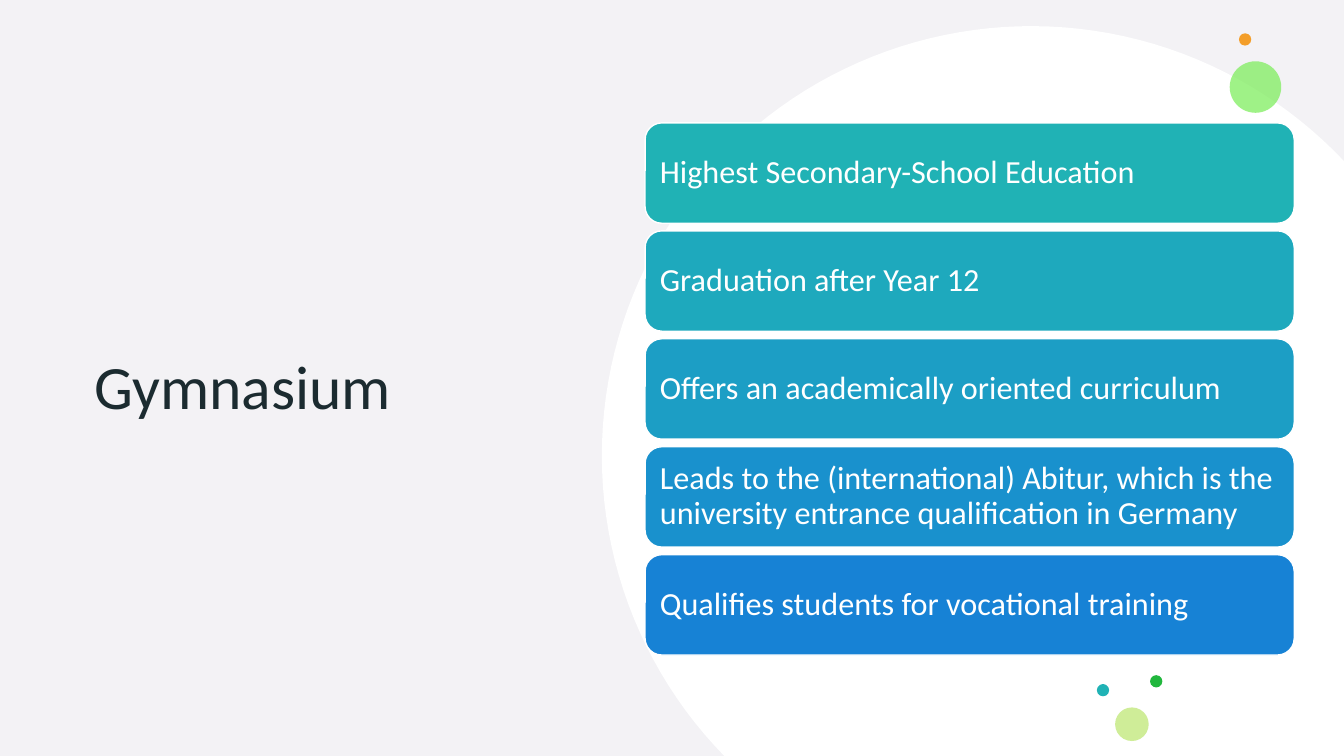
import math
from dataclasses import dataclass

from lxml import etree
from pptx import Presentation
from pptx import util as u
from pptx.dml import color
from pptx.enum import shapes, text
from pptx.oxml import ns

FONT = "Calibri"
WIDTH, HEIGHT = 960, 540
WHITE = "FFFFFF"


@dataclass
class Dot:
    left: float
    top: float
    diameter: float
    fill: str
    opacity: int = 100


@dataclass
class Card:
    label: str
    fill: str


DOTS = [
    Dot(878.4, 43.8, 36.8, "7BED59", 72),
    Dot(885, 23.8, 8.8, "F39E29"),
    Dot(821.5, 482.3, 8.8, "21B73D"),
    Dot(796.5, 505.3, 24, "CFED98"),
    Dot(783.5, 488.6, 8.8, "20B2B5"),
]

CARDS = [
    Card("Highest Secondary-School Education", "20B2B5"),
    Card("Graduation after Year 12", "1EA9BD"),
    Card("Offers an academically oriented curriculum", "1C9EC5"),
    Card("Leads to the (international) Abitur, which is the "
         "university entrance qualification in Germany", "1991CD"),
    Card("Qualifies students for vocational training", "1782D5"),
]
CARD_LEFT, CARD_TOP, CARD_WIDTH, CARD_HEIGHT = 460.8, 87.8, 463.7, 71.7
CARD_PITCH = 77.1


def paint(fill, colour: str, opacity: int = 100) -> None:
    fill.solid()
    fill.fore_color.rgb = color.RGBColor.from_string(colour)
    if opacity < 100:
        srgb = fill._xPr.find(".//" + ns.qn("a:srgbClr"))
        etree.SubElement(srgb, ns.qn("a:alpha"), val=str(opacity * 1000))


def write(shape, content: str, *, size: float, colour: str) -> None:
    frame = shape.text_frame
    frame.word_wrap = True
    frame.vertical_anchor = text.MSO_ANCHOR.MIDDLE
    paragraph = frame.paragraphs[0]
    paragraph.text = content
    paragraph.alignment = text.PP_ALIGN.LEFT
    paragraph.line_spacing = 0.9
    font = paragraph.runs[0].font
    font.name = FONT
    font.size = u.Pt(size)
    paint(font.fill, colour)


def add_clipped_disc(slide, centre_x: float, centre_y: float, radius: float, steps: int = 90) -> None:
    """Draw a white disc cut off by the right and bottom slide edges."""
    start = math.pi - math.asin((HEIGHT - centre_y) / radius)
    end = 2 * math.pi - math.acos((WIDTH - centre_x) / radius)
    angles = [start + (end - start) * step / steps for step in range(steps + 1)]
    outline = [(u.Pt(centre_x + radius * math.cos(angle)),
                u.Pt(centre_y + radius * math.sin(angle))) for angle in angles]
    outline.append((u.Pt(WIDTH), u.Pt(HEIGHT)))
    builder = slide.shapes.build_freeform(*outline[0])
    builder.add_line_segments(outline[1:], close=True)
    disc = builder.convert_to_shape()
    disc.shadow.inherit = False
    paint(disc.fill, WHITE)
    disc.line.fill.background()


def add_dot(slide, dot: Dot) -> None:
    shape = slide.shapes.add_shape(
        shapes.MSO_SHAPE.OVAL, u.Pt(dot.left), u.Pt(dot.top), u.Pt(dot.diameter), u.Pt(dot.diameter))
    shape.shadow.inherit = False
    paint(shape.fill, dot.fill, dot.opacity)
    shape.line.fill.background()


def add_card(slide, card: Card, top: float) -> None:
    shape = slide.shapes.add_shape(
        shapes.MSO_SHAPE.ROUNDED_RECTANGLE,
        u.Pt(CARD_LEFT), u.Pt(top), u.Pt(CARD_WIDTH), u.Pt(CARD_HEIGHT))
    shape.shadow.inherit = False
    paint(shape.fill, card.fill)
    paint(shape.line.fill, WHITE)
    shape.line.width = u.Pt(1)
    write(shape, card.label, size=23, colour=WHITE)


def main() -> None:
    presentation = Presentation()
    presentation.slide_width, presentation.slide_height = u.Pt(WIDTH), u.Pt(HEIGHT)
    slide = presentation.slides.add_slide(presentation.slide_layouts[6])
    paint(slide.background.fill, "F3F2F5")

    title = slide.shapes.add_textbox(u.Pt(60.5), u.Pt(75), u.Pt(363), u.Pt(406))
    write(title, "Gymnasium", size=44, colour="1B2B30")

    add_clipped_disc(slide, 736.7, 325.5, 306.8)
    for dot in DOTS:
        add_dot(slide, dot)
    for row, card in enumerate(CARDS):
        add_card(slide, card, CARD_TOP + row * CARD_PITCH)

    presentation.save("out.pptx")


if __name__ == "__main__":
    main()
